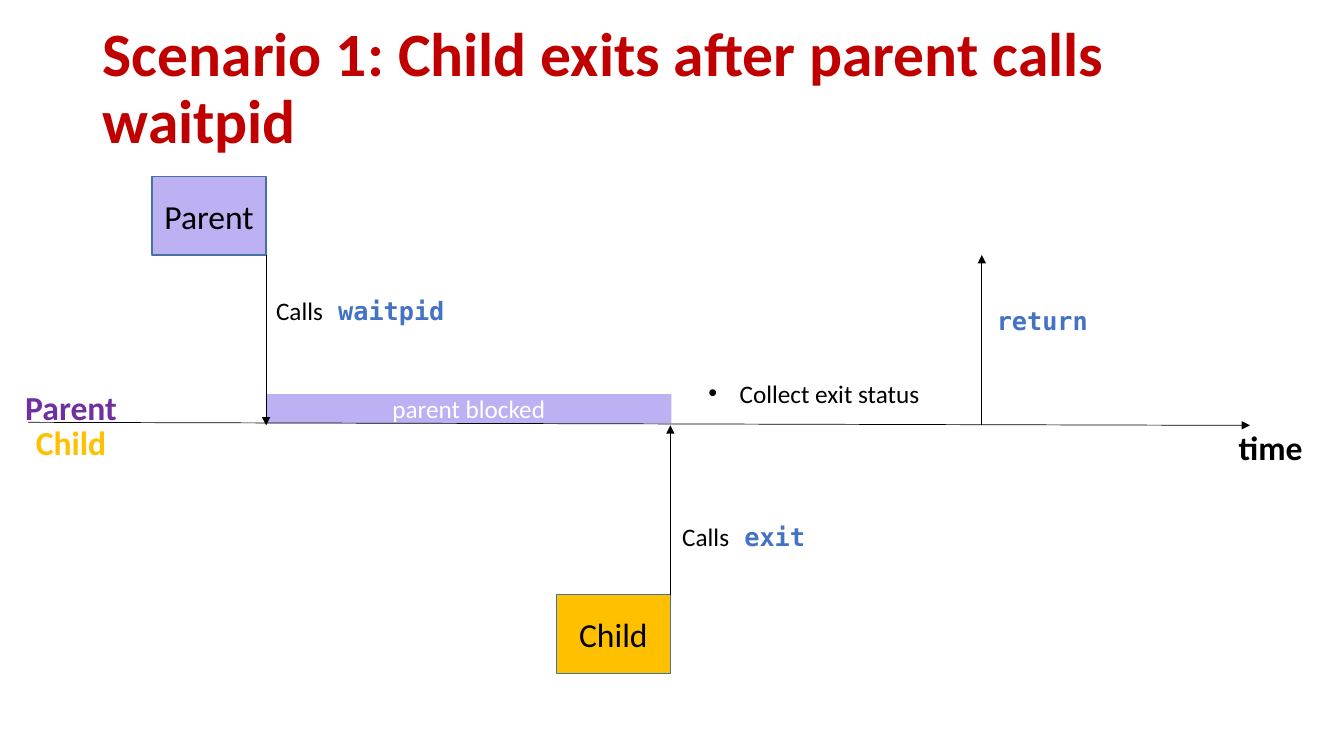
"""Draw a timeline of a parent that waits for its child to exit."""
from dataclasses import dataclass

from lxml import etree
from pptx import Presentation
from pptx.dml.color import RGBColor
from pptx.enum.shapes import MSO_CONNECTOR, MSO_SHAPE
from pptx.enum.text import MSO_ANCHOR, MSO_AUTO_SIZE, PP_ALIGN
from pptx.oxml.ns import qn
from pptx.util import Inches, Pt

RECT, LINE = MSO_SHAPE.RECTANGLE, MSO_CONNECTOR.STRAIGHT
LEFT, CENTER = PP_ALIGN.LEFT, PP_ALIGN.CENTER
MIDDLE, TOP = MSO_ANCHOR.MIDDLE, MSO_ANCHOR.TOP
FIXED, GROW = MSO_AUTO_SIZE.NONE, MSO_AUTO_SIZE.SHAPE_TO_FIT_TEXT

COLS, ROWS, CELL = 133.33, 75, 0.1
SANS, MONO = "Calibri", "DejaVu Sans Mono"
BLACK, WHITE, RED, BLUE = "000000", "FFFFFF", "C00000", "4472C4"
LILAC, PURPLE, GOLD, EDGE = "BEB1F3", "7030A0", "FFC000", "43739E"

CALL, EXIT, BACK = 26.4, 66.5, 97.4
AXIS, FLOOR, ROOF = 42.2, 59, 25.3
WIDE, TALL = 11.3, 7.8


@dataclass(frozen=True)
class Run:
    text: str
    color: str = BLACK
    size: int = 18
    font: str = SANS
    bold: bool = False


@dataclass(frozen=True)
class Area:
    col: float
    row: float
    wide: float
    tall: float


@dataclass(frozen=True)
class Box:
    area: Area
    fill: str
    run: Run
    edge: str = ""


@dataclass(frozen=True)
class Label:
    area: Area
    runs: tuple[Run, ...]
    align: PP_ALIGN = LEFT
    wrap: bool = False
    bullet: bool = False


@dataclass(frozen=True)
class Arrow:
    col: float
    row: float
    end_col: float
    end_row: float


def code(text: str) -> Run:
    """Make a run of program text."""
    return Run(text, BLUE, font=MONO, bold=True)


def mark(col: float, row: float, text: str, color: str) -> Label:
    """Make a bold centred label beside the axis."""
    return Label(Area(col, row, WIDE, 5), (Run(text, color, 24, bold=True),), CENTER, True)


TITLE = Area(9.2, 1.7, 121.4, 14.5)
HEADING = Run("Scenario 1: Child exits after parent calls waitpid", RED, 44, bold=True)
BOXES = (
    Box(Area(CALL, 39.1, 40.2, 2.9), LILAC, Run("parent blocked", WHITE)),
    Box(Area(CALL - WIDE, ROOF - TALL, WIDE, TALL), LILAC, Run("Parent", size=24), EDGE),
    Box(Area(EXIT - WIDE, FLOOR, WIDE, TALL), GOLD, Run("Child", size=24), EDGE),
)
ARROWS = (
    Arrow(2.8, 41.9, 124, AXIS),
    Arrow(CALL, ROOF, CALL, AXIS),
    Arrow(EXIT, FLOOR, EXIT, AXIS),
    Arrow(BACK, AXIS, BACK, ROOF),
)
LABELS = (
    mark(120.4, 41.9, "time", BLACK),
    mark(1.4, 37.9, "Parent", PURPLE),
    mark(1.4, 41.4, "Child", GOLD),
    Label(Area(CALL, 28.8, 18.8, 4), (Run("Calls"), code(" waitpid"))),
    Label(Area(66.7, 51.2, 14.3, 4), (Run("Calls"), code(" exit"))),
    Label(Area(69.3, 37, 23.2, 4), (Run("Collect exit status"),), bullet=True),
    Label(Area(97.9, 29.8, 11.1, 4), (code("return"),)),
)


def cells(count: float) -> int:
    """Turn a count of grid cells into a length."""
    return Inches(count * CELL)


def frame(area: Area) -> tuple[int, int, int, int]:
    """Turn a grid area into left, top, width and height."""
    return cells(area.col), cells(area.row), cells(area.wide), cells(area.tall)


def paint(target, color: str) -> None:
    """Set a solid fill from a hex string."""
    target.solid()
    target.fore_color.rgb = RGBColor.from_string(color)


def write(shape, runs: tuple[Run, ...], align: PP_ALIGN, anchor: MSO_ANCHOR,
          wrap: bool = True, fit: MSO_AUTO_SIZE = FIXED):
    """Write runs into a shape and return the paragraph."""
    body = shape.text_frame
    body.word_wrap, body.auto_size, body.vertical_anchor = wrap, fit, anchor
    line = body.paragraphs[0]
    line.alignment = align
    for item in runs:
        run = line.add_run()
        run.text = item.text
        font = run.font
        font.name, font.size, font.bold = item.font, Pt(item.size), item.bold
        paint(font.fill, item.color)
    return line


def draw_box(shapes, box: Box) -> None:
    """Draw a filled box with centred text."""
    shape = shapes.add_shape(RECT, *frame(box.area))
    shape.shadow.inherit = False
    paint(shape.fill, box.fill)
    if box.edge:
        paint(shape.line.fill, box.edge)
        shape.line.width = Pt(1)
    else:
        shape.line.fill.background()
    write(shape, (box.run,), CENTER, MIDDLE)


def draw_arrow(shapes, arrow: Arrow) -> None:
    """Draw a thin line with a head at its end."""
    ends = (arrow.col, arrow.row, arrow.end_col, arrow.end_row)
    shape = shapes.add_connector(LINE, *map(cells, ends))
    paint(shape.line.fill, BLACK)
    shape.line.width = Pt(0.5)
    props = shape.element.spPr
    etree.SubElement(props.find(qn("a:ln")), qn("a:tailEnd"), type="triangle")
    etree.SubElement(props, qn("a:effectLst"))


def draw_label(shapes, label: Label) -> None:
    """Draw free text, with a bullet if asked."""
    shape = shapes.add_textbox(*frame(label.area))
    line = write(shape, label.runs, label.align, TOP, label.wrap, GROW)
    if label.bullet:
        props = line._p.get_or_add_pPr()
        props.set("marL", str(cells(3.1)))
        props.set("indent", str(-cells(3.1)))
        etree.SubElement(props, qn("a:buFont"), typeface="Arial")
        etree.SubElement(props, qn("a:buChar"), char="•")


def main() -> None:
    """Build the slide and save it."""
    deck = Presentation()
    deck.slide_width, deck.slide_height = cells(COLS), cells(ROWS)
    shapes = deck.slides.add_slide(deck.slide_layouts.get_by_name("Title Only")).shapes
    title = shapes.title
    title.left, title.top, title.width, title.height = frame(TITLE)
    write(title, (HEADING,), LEFT, MIDDLE).line_spacing = 0.9
    for box in BOXES:
        draw_box(shapes, box)
    for arrow in ARROWS:
        draw_arrow(shapes, arrow)
    for label in LABELS:
        draw_label(shapes, label)
    deck.save("out.pptx")


if __name__ == "__main__":
    main()
